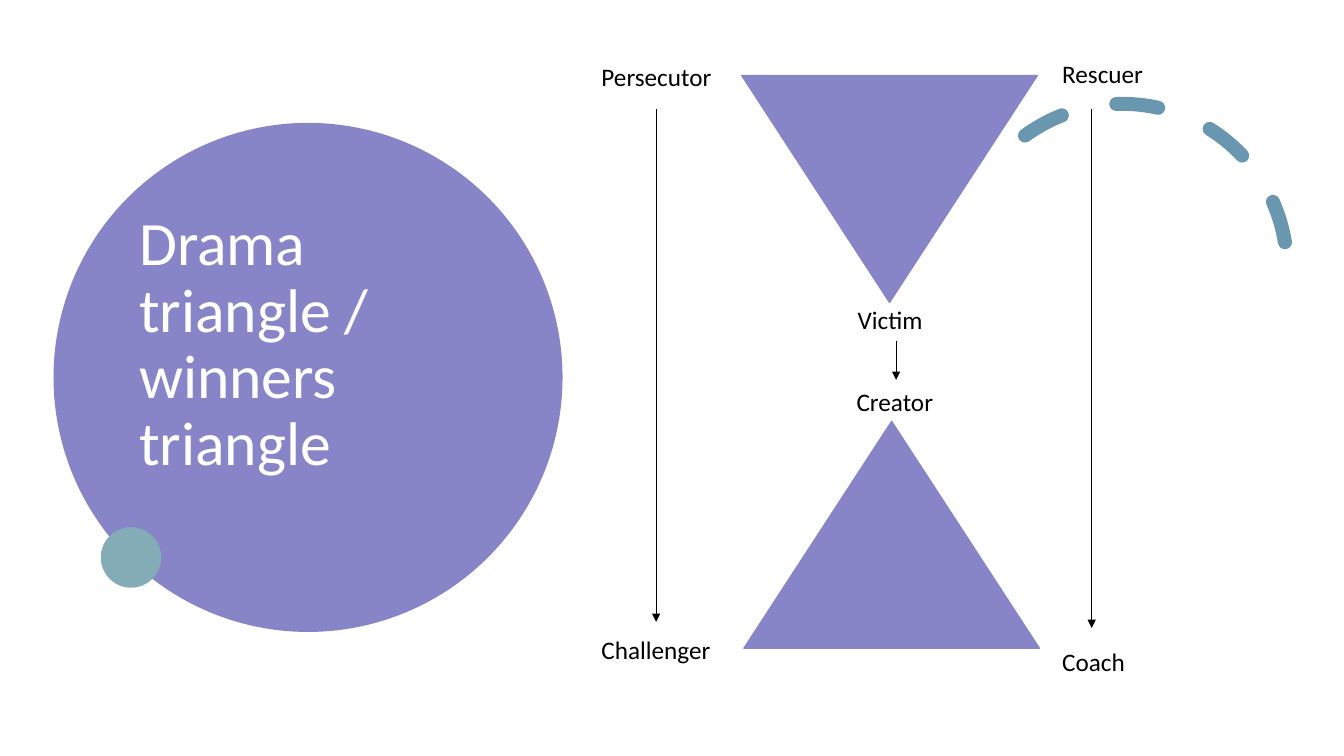
import pptx
import pptx.dml.color
import pptx.enum.dml
import pptx.enum.shapes
import pptx.enum.text
import pptx.oxml.ns
import pptx.util
from lxml import etree

Pt = pptx.util.Pt
Kind = pptx.enum.shapes.MSO_SHAPE
PURPLE, TEAL, BLUE = "8784C7", "84ACB6", "6997AF"
BLACK, WHITE = "000000", "FFFFFF"
LABELS = [
    ("Persecutor", 422.6, 40.3), ("Victim", 605.5, 213.8),
    ("Rescuer", 751.7, 38.2), ("Creator", 604.8, 272.2),
    ("Challenger", 422.6, 449.3), ("Coach", 751.7, 457.9),
]
ARROWS = [(779.8, 77.8, 448.6), (468.7, 77.8, 444.2), (640.1, 243.4, 271.4)]


def color(target, code):
    target.rgb = pptx.dml.color.RGBColor.from_string(code)


def child(parent, tag, **attrs):
    return etree.SubElement(parent, pptx.oxml.ns.qn(tag), **attrs)


def style(font, size, code):
    font.name = "Calibri"
    font.size = Pt(size)
    color(font.color, code)


def stroke(line, code, width):
    line.fill.solid()
    color(line.fill.fore_color, code)
    line.width = Pt(width)


def shape(slide, kind, left, top, width, height, fill=None, edge=None):
    item = slide.shapes.add_shape(kind, Pt(left), Pt(top), Pt(width), Pt(height))
    item.shadow.inherit = False
    if fill:
        item.fill.solid()
        color(item.fill.fore_color, fill)
    else:
        item.fill.background()
    if edge:
        stroke(item.line, edge, 1)
    else:
        item.line.fill.background()
    return item


def title(slide, text):
    box = slide.shapes.title
    box.left, box.top, box.width, box.height = Pt(92.2), Pt(110.2), Pt(254.9), Pt(320.4)
    slide.shapes._spTree.append(box._element)  # bring above the circle
    frame = box.text_frame
    frame.text = text
    frame.word_wrap = True
    frame.auto_size = pptx.enum.text.MSO_AUTO_SIZE.NONE
    frame.vertical_anchor = pptx.enum.text.MSO_ANCHOR.MIDDLE
    frame.margin_bottom = Pt(51)
    para = frame.paragraphs[0]
    para.alignment = pptx.enum.text.PP_ALIGN.LEFT
    para.line_spacing = 0.9
    style(para.font, 44, WHITE)


def label(slide, text, left, top):
    box = slide.shapes.add_textbox(Pt(left), Pt(top), Pt(129.6), Pt(29))
    frame = box.text_frame
    frame.word_wrap = True
    frame.auto_size = pptx.enum.text.MSO_AUTO_SIZE.SHAPE_TO_FIT_TEXT
    frame.text = text
    style(frame.paragraphs[0].font, 18, BLACK)


def arrow(slide, x, top, end):
    item = slide.shapes.add_connector(
        pptx.enum.shapes.MSO_CONNECTOR.STRAIGHT, Pt(x), Pt(top), Pt(x), Pt(end))
    stroke(item.line, BLACK, 0.5)
    child(item.line._get_or_add_ln(), "a:tailEnd", type="triangle")
    child(item._element.spPr, "a:effectLst")


def arc(slide):
    item = shape(slide, Kind.ARC, 684, 74.2, 235.4, 235.4)
    item.rotation = 330.2
    item.adjustments[0] = 158.17
    item.adjustments[1] = 17.81
    stroke(item.line, BLUE, 10)
    item.line.dash_style = pptx.enum.dml.MSO_LINE.DASH
    item.line._get_or_add_ln().set("cap", "rnd")


def main():
    deck = pptx.Presentation()
    deck.slide_width, deck.slide_height = Pt(960), Pt(540)
    slide = deck.slides.add_slide(deck.slide_layouts[5])

    # Title circle and accents
    shape(slide, Kind.OVAL, 38.2, 87.8, 363.6, 363.6, PURPLE)
    title(slide, "Drama triangle / winners triangle")
    arc(slide)
    shape(slide, Kind.OVAL, 72, 376.6, 43.2, 43.2, TEAL)

    # Drama triangle above, winners triangle below
    for left, top, turn in [(529.9, 54, 180), (531.4, 301, 0)]:
        item = shape(slide, Kind.ISOSCELES_TRIANGLE, left, top, 211, 162, PURPLE, PURPLE)
        item.rotation = turn

    # Roles and the shifts between them
    for text, left, top in LABELS:
        label(slide, text, left, top)
    for x, top, end in ARROWS:
        arrow(slide, x, top, end)

    deck.save("out.pptx")


if __name__ == "__main__":
    main()
